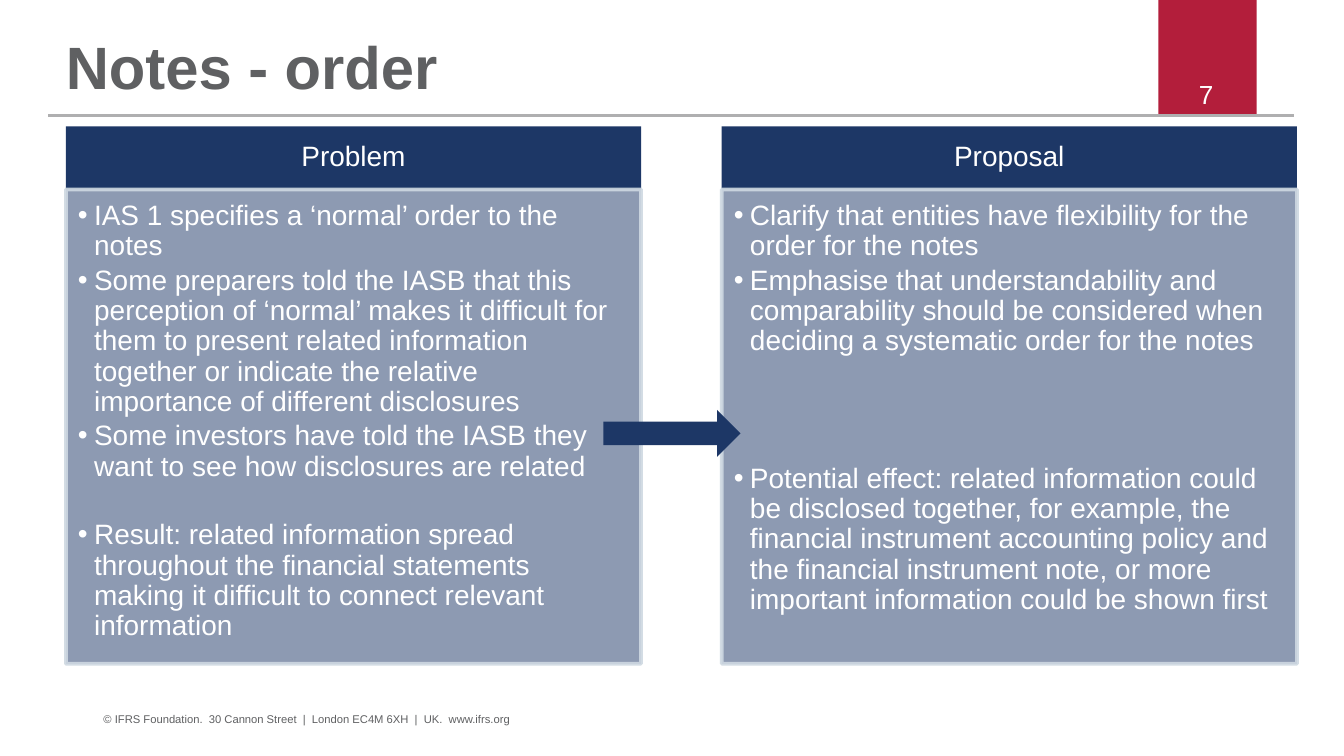
"""Builds the slide that sets a problem beside its proposal."""
import dataclasses

import pptx
import pptx.dml.color
import pptx.enum.shapes
import pptx.enum.text
import pptx.oxml
import pptx.oxml.ns
import pptx.util

SHAPE = pptx.enum.shapes.MSO_SHAPE
ALIGN = pptx.enum.text.PP_ALIGN
ANCHOR = pptx.enum.text.MSO_ANCHOR


@dataclasses.dataclass(frozen=True)
class Theme:
    """Colours, type sizes in points and grid of the slide."""
    font: str = "Arial"
    navy: str = "1D3766"
    red: str = "B31E3B"
    grey: str = "5F6062"
    rule: str = "AFAFB0"
    edge: str = "CFD9E2"
    white: str = "FFFFFF"
    title: float = 32
    body: float = 15
    number: float = 14
    footer: float = 6
    cell: float = 0.1
    leading: float = 0.9
    blank_line: float = 18.4


THEME = Theme()
COLUMN = {"left": 4.9, "pitch": 48.8, "width": 42.8}
HEAD = {"top": 9.4, "height": 4.7}
PANEL_HEIGHT = 35.3

COLUMNS = [
    ("Problem", [
        ("IAS 1 specifies a ‘normal’ order to the notes", 0),
        ("Some preparers told the IASB that this perception of ‘normal’ makes "
         "it difficult for them to present related information together or "
         "indicate the relative importance of different disclosures", 0),
        ("Some investors have told the IASB they want to see how disclosures "
         "are related", 0),
        ("Result: related information spread throughout the financial "
         "statements making it difficult to connect relevant information", 1),
    ]),
    ("Proposal", [
        ("Clarify that entities have flexibility for the order for the notes", 0),
        ("Emphasise that understandability and comparability should be "
         "considered when deciding a systematic order for the notes", 0),
        ("Potential effect: related information could be disclosed together, "
         "for example, the financial instrument accounting policy and the "
         "financial instrument note, or more important information could be "
         "shown first", 3),
    ]),
]


def grid(*cells):
    """Turn grid cells into lengths."""
    return [pptx.util.Inches(round(c * THEME.cell, 2)) for c in cells]


def rgb(value):
    """Turn a hex value into a colour."""
    return pptx.dml.color.RGBColor.from_string(value)


def element(tag, attributes=""):
    """Make an empty drawing element."""
    return pptx.oxml.parse_xml(
        f'<a:{tag} {pptx.oxml.ns.nsdecls("a")} {attributes}/>')


def apply(obj, values):
    """Set each attribute named in a dict of format values."""
    for name, value in values.items():
        setattr(obj, name, value)


def set_alpha(fmt, percent):
    """Make a solid fill partly transparent."""
    clr = next(fmt._xPr.iter(pptx.oxml.ns.qn("a:srgbClr")))
    clr.append(element("alpha", f'val="{percent * 1000}"'))


def set_bullet(p, indent):
    """Give a paragraph a hanging bullet."""
    pPr = p._p.get_or_add_pPr()
    pPr.set("marL", str(indent))
    pPr.set("indent", str(-indent))
    pPr.append(element("buFont", f'typeface="{THEME.font}"'))
    pPr.append(element("buChar", 'char="•"'))


def set_frame(tf, margins=(0, 0, 0, 0), anchor=ANCHOR.TOP):
    """Set margins, wrapping and anchor of a text frame."""
    sides = ("margin_left", "margin_top", "margin_right", "margin_bottom")
    apply(tf, dict(zip(sides, grid(*margins)), word_wrap=True,
                   vertical_anchor=anchor))


def write(p, text, size, color, bold=False, **para):
    """Write one run into a paragraph."""
    apply(p, para)
    r = p.add_run()
    r.text = text
    apply(r.font, {"name": THEME.font, "size": pptx.util.Pt(size), "bold": bold})
    r.font.color.rgb = rgb(color)


def add_block(s, kind, box, color):
    """Add a flat filled shape without outline."""
    sp = s.shapes.add_shape(kind, *grid(*box))
    sp.shadow.inherit = False
    sp.fill.solid()
    sp.fill.fore_color.rgb = rgb(color)
    sp.line.fill.background()
    return sp


def add_label(s, box, text, size, color, anchor=ANCHOR.TOP, **fmt):
    """Add a one-line text box."""
    tf = s.shapes.add_textbox(*grid(*box)).text_frame
    set_frame(tf, anchor=anchor)
    write(tf.paragraphs[0], text, size, color, **fmt)


def add_rule(s, left, right, y):
    """Add the thin rule under the title."""
    x1, x2, y = grid(left, right, y)
    ln = s.shapes.add_connector(
        pptx.enum.shapes.MSO_CONNECTOR.STRAIGHT, x1, y, x2, y)
    ln.line.color.rgb = rgb(THEME.rule)
    ln.line.width = pptx.util.Pt(1.2)
    ln._element.spPr.append(element("effectLst"))


def add_head(s, left, text):
    """Add the heading bar of a column."""
    box = (left, HEAD["top"], COLUMN["width"], HEAD["height"])
    sp = add_block(s, SHAPE.RECTANGLE, box, THEME.navy)
    set_frame(sp.text_frame, (1.2, 0.7, 1.2, 0.7), ANCHOR.MIDDLE)
    write(sp.text_frame.paragraphs[0], text, THEME.body, THEME.white,
          alignment=ALIGN.CENTER, line_spacing=THEME.leading)


def add_panel(s, left, points):
    """Add the bulleted panel of a column."""
    box = (left, HEAD["top"] + HEAD["height"], COLUMN["width"], PANEL_HEIGHT)
    sp = add_block(s, SHAPE.RECTANGLE, box, THEME.navy)
    set_alpha(sp.fill, 50)
    sp.line.color.rgb = rgb(THEME.edge)
    sp.line.width = pptx.util.Pt(2)
    set_alpha(sp.line.fill, 90)
    tf = sp.text_frame
    set_frame(tf, (0.9, 0.9, 1.4, 1.3))
    for i, (text, gap) in enumerate(points):
        p = tf.add_paragraph() if i else tf.paragraphs[0]
        set_bullet(p, pptx.util.Inches(0.12))
        write(p, text, THEME.body, THEME.white, alignment=ALIGN.LEFT,
              line_spacing=THEME.leading,
              space_before=pptx.util.Pt(gap * THEME.blank_line),
              space_after=pptx.util.Pt(0.15 * THEME.body))


def main():
    """Build and save the slide."""
    prs = pptx.Presentation()
    prs.slide_width = pptx.util.Inches(10)
    prs.slide_height = prs.slide_width * 9 // 16
    s = prs.slides.add_slide(prs.slide_layouts[6])
    add_block(s, SHAPE.RECTANGLE, (86.2, 0, 7.3, 8.6), THEME.red)
    add_rule(s, 3.6, 96.3, 8.6)
    add_label(s, (7.7, 53, 61.8, 1.6),
              "© IFRS Foundation.  30 Cannon Street  |  London EC4M 6XH  |  "
              "UK.  www.ifrs.org", THEME.footer, THEME.grey)
    add_label(s, (86.3, 5.8, 6.9, 1.6), "7", THEME.number, THEME.white,
              alignment=ALIGN.CENTER)
    add_label(s, (4.9, 2.7, 68.4, 4.9), "Notes - order", THEME.title, THEME.grey,
              anchor=ANCHOR.BOTTOM, bold=True, line_spacing=THEME.leading)
    for i, (head, points) in enumerate(COLUMNS):
        left = COLUMN["left"] + i * COLUMN["pitch"]
        add_head(s, left, head)
        add_panel(s, left, points)
    add_block(s, SHAPE.RIGHT_ARROW, (44.9, 30.5, 10.2, 3.5), THEME.navy)
    prs.save("out.pptx")


if __name__ == "__main__":
    main()
